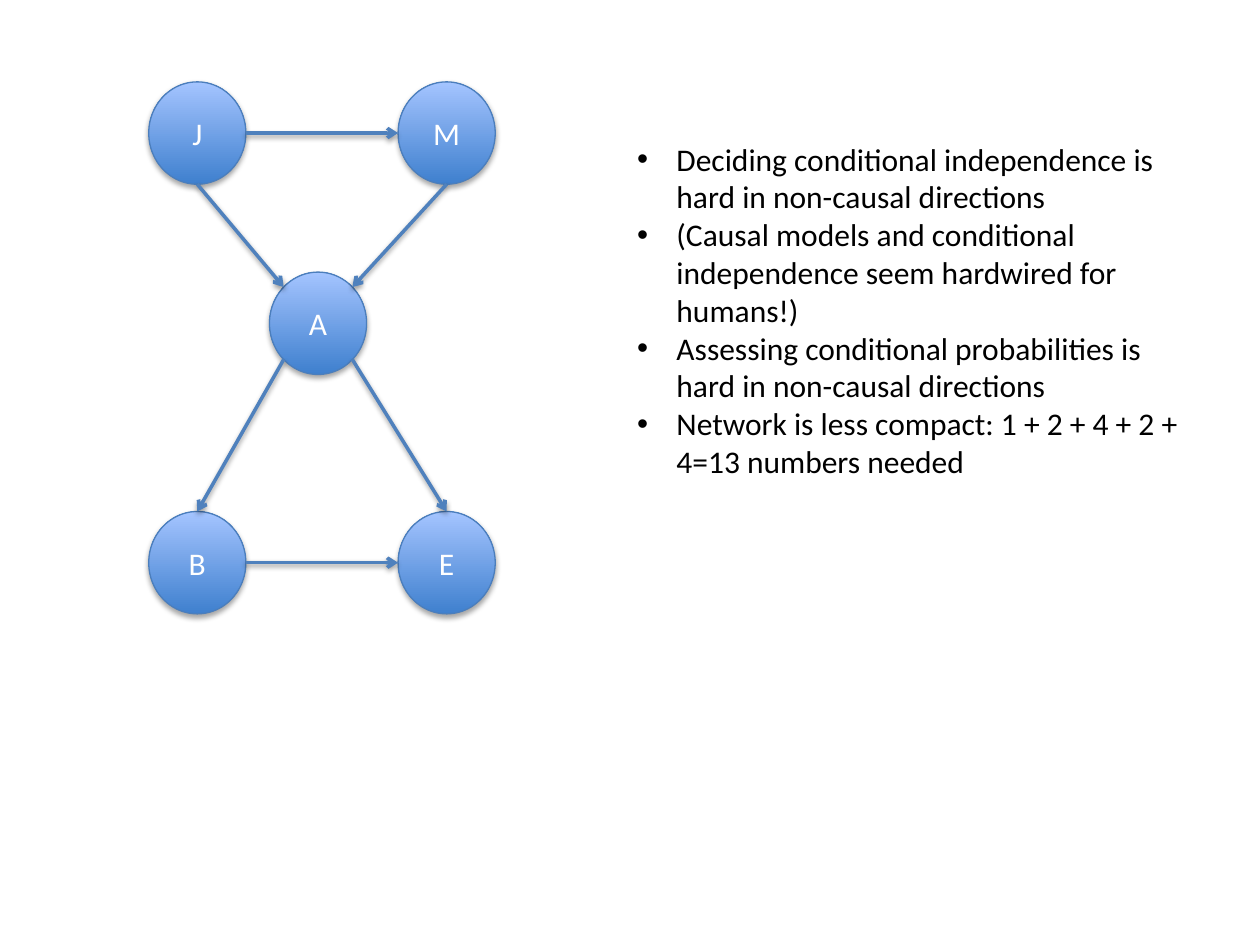
"""Build a slide with a five-node network in non-causal order and four remarks."""
from math import cos, radians, sin

from lxml import etree
from pptx import Presentation
from pptx.dml.color import RGBColor
from pptx.enum.shapes import MSO_CONNECTOR, MSO_SHAPE
from pptx.enum.text import MSO_ANCHOR, PP_ALIGN
from pptx.oxml.ns import qn
from pptx.util import Pt

STRAIGHT = MSO_CONNECTOR.STRAIGHT
OVAL = MSO_SHAPE.OVAL
MIDDLE = MSO_ANCHOR.MIDDLE
CENTER, LEFT = PP_ALIGN.CENTER, PP_ALIGN.LEFT
COLORS = {
    "node_bottom": "3F80CE",
    "node_top": "A4C4FF",
    "node_line": "4B7EBC",
    "arrow": "4F81BD",
    "label": "FFFFFF",
    "text": "000000",
    "shadow": "000000",
}
NODE_WIDTH, NODE_HEIGHT = 55.5, 58.5


def write_text(paragraph, text, color="text", size=18, align=LEFT, bullet=None, indent=22.5):
    paragraph.alignment = align
    run = paragraph.add_run()
    run.text = text
    run.font.name = "Calibri"
    run.font.size = Pt(size)
    run.font.color.rgb = RGBColor.from_string(COLORS[color])
    if bullet:
        properties = paragraph._p.get_or_add_pPr()
        properties.set("marL", str(Pt(indent)))
        properties.set("indent", str(-Pt(indent)))
        etree.SubElement(properties, qn("a:buFont"), typeface="Arial")
        etree.SubElement(properties, qn("a:buChar"), char=bullet)


def add_shadow(shape, distance, opacity):
    effects = etree.SubElement(shape._element.spPr, qn("a:effectLst"))
    shadow = etree.SubElement(
        effects, qn("a:outerShdw"), blurRad=str(Pt(3.1)), dist=str(Pt(distance)),
        dir="5400000", rotWithShape="0")
    color = etree.SubElement(shadow, qn("a:srgbClr"), val=COLORS["shadow"])
    etree.SubElement(color, qn("a:alpha"), val=str(opacity * 1000))


presentation = Presentation()
presentation.slide_width, presentation.slide_height = Pt(720), Pt(540)
slide = presentation.slides.add_slide(presentation.slide_layouts[6])
network = slide.shapes.add_group_shape()

positions = {
    "J": (85, 46.8),
    "M": (227.5, 46.8),
    "A": (154, 155.5),
    "B": (85, 292.3),
    "E": (227.5, 292.3),
}
nodes = {}
for name, (left, top) in positions.items():
    node = network.shapes.add_shape(OVAL, Pt(left), Pt(top), Pt(NODE_WIDTH), Pt(NODE_HEIGHT))
    node.fill.gradient()
    node.fill.gradient_angle = 90
    for stop, color in zip(node.fill.gradient_stops, ("node_bottom", "node_top")):
        stop.color.rgb = RGBColor.from_string(COLORS[color])
    node.line.color.rgb = RGBColor.from_string(COLORS["node_line"])
    node.line.width = Pt(0.75)
    add_shadow(node, distance=1.8, opacity=35)
    node.text_frame.vertical_anchor = MIDDLE
    write_text(node.text_frame.paragraphs[0], name, color="label", align=CENTER)
    nodes[name] = node

RIGHT_SIDE, BOTTOM_RIGHT, BOTTOM, BOTTOM_LEFT = 0, 45, 90, 135
LEFT_SIDE, TOP_LEFT, TOP, TOP_RIGHT = 180, 225, 270, 315
edges = [
    ("J", RIGHT_SIDE, "M", LEFT_SIDE),
    ("J", BOTTOM, "A", TOP_LEFT),
    ("M", BOTTOM, "A", TOP_RIGHT),
    ("A", BOTTOM_LEFT, "B", TOP),
    ("A", BOTTOM_RIGHT, "E", TOP),
    ("B", RIGHT_SIDE, "E", LEFT_SIDE),
]
for source, source_angle, target, target_angle in edges:
    ends = []
    for name, angle in ((source, source_angle), (target, target_angle)):
        left, top = positions[name]
        ends.append(Pt(left + NODE_WIDTH / 2 * (1 + cos(radians(angle)))))
        ends.append(Pt(top + NODE_HEIGHT / 2 * (1 + sin(radians(angle)))))
    arrow = network.shapes.add_connector(STRAIGHT, *ends)
    if target_angle == TOP:
        arrow.end_connect(nodes[target], 0)
    arrow.line.color.rgb = RGBColor.from_string(COLORS["arrow"])
    arrow.line.width = Pt(2)
    etree.SubElement(arrow.line._get_or_add_ln(), qn("a:tailEnd"), type="arrow")
    add_shadow(arrow, distance=1.6, opacity=38)

remarks = [
    "Deciding conditional independence is hard in non-causal directions",
    "(Causal models and conditional independence seem hardwired for humans!)",
    "Assessing conditional probabilities is hard in non-causal directions",
    "Network is less compact: 1 + 2 + 4 + 2 + 4=13 numbers needed",
]
remark_box = slide.shapes.add_textbox(Pt(357), Pt(76.3), Pt(332), Pt(208))
frame = remark_box.text_frame
frame.word_wrap = True
for index, remark in enumerate(remarks):
    paragraph = frame.add_paragraph() if index else frame.paragraphs[0]
    write_text(paragraph, remark, bullet="•")

presentation.save("out.pptx")
